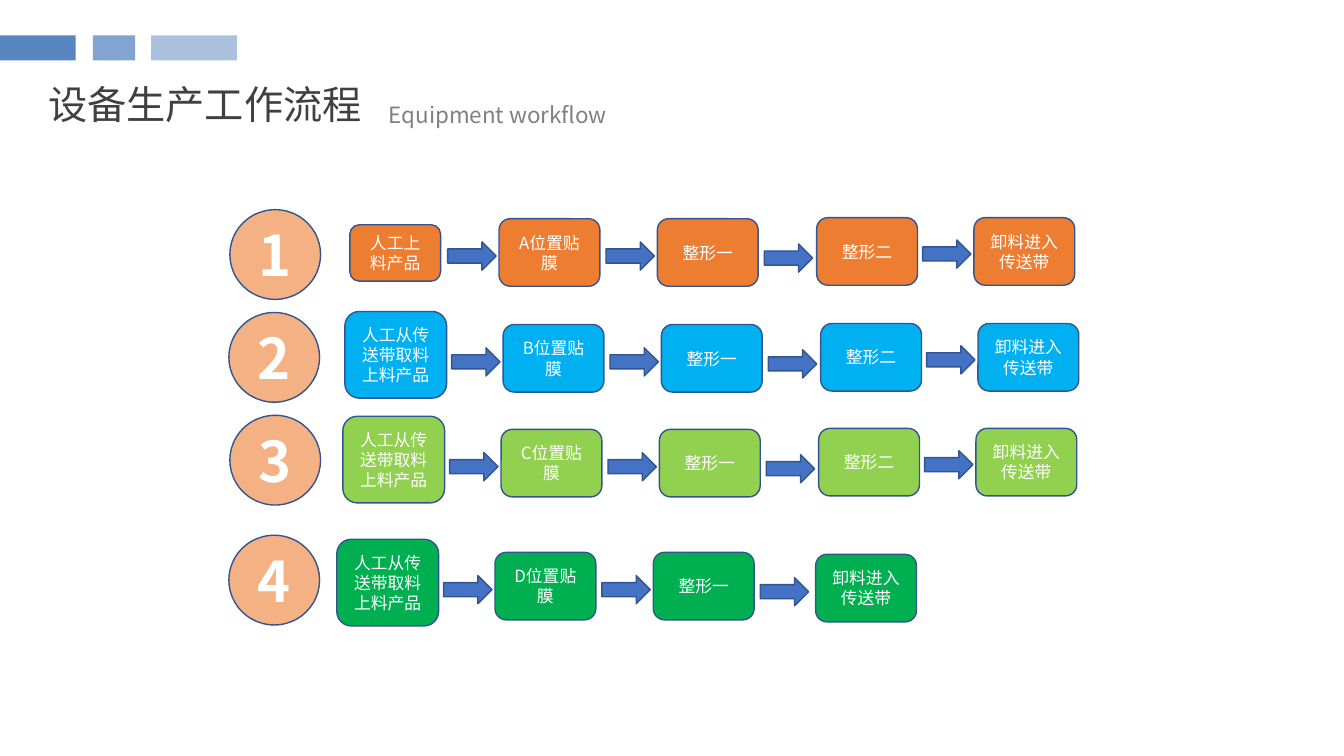
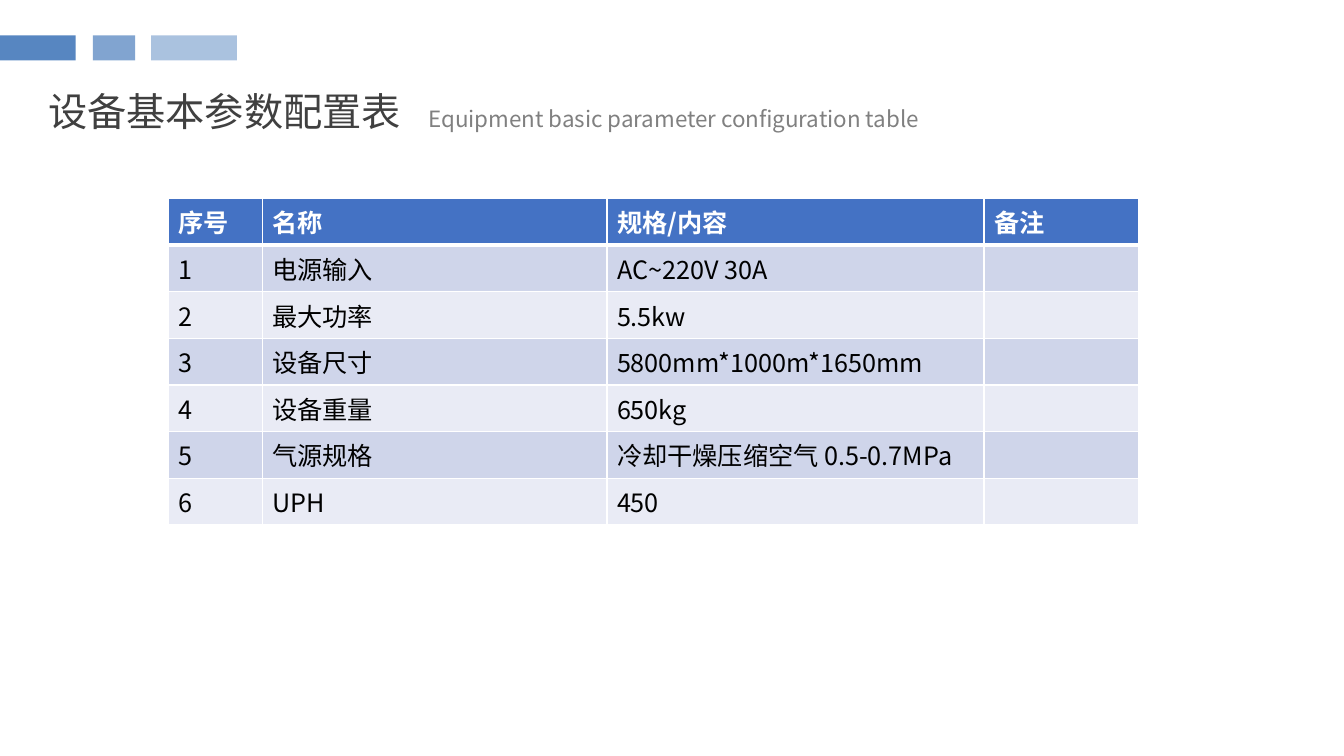
from lxml import etree
from pptx import Presentation
from pptx.dml.color import RGBColor
from pptx.enum import shapes, text
from pptx.oxml import ns
from pptx.util import Inches, Pt

FONT = "Noto Sans CJK SC"
WHITE = RGBColor(0xFF, 0xFF, 0xFF)
BLACK = RGBColor(0, 0, 0)
DARK = RGBColor(0x40, 0x40, 0x40)
GRAY = RGBColor(0x80, 0x80, 0x80)
BAND = RGBColor(0x57, 0x86, 0xC1)
BLUE = RGBColor(0x44, 0x72, 0xC4)
EDGE = RGBColor(0x32, 0x54, 0x91)
PEACH = RGBColor(0xF4, 0xB1, 0x83)
ORANGE = RGBColor(0xED, 0x7D, 0x31)
SKY = RGBColor(0x00, 0xB0, 0xF0)
LIME = RGBColor(0x92, 0xD0, 0x50)
GREEN = RGBColor(0x00, 0xB0, 0x50)
PALE = RGBColor(0xE9, 0xEB, 0xF5)
MIST = RGBColor(0xCF, 0xD5, 0xEA)

HEAD = {"size": Pt(28), "bold": False, "color": DARK}
SUB = {"size": Pt(16), "bold": False, "color": GRAY}
STEP = {"size": Pt(12), "bold": False, "color": WHITE}
NUM = {"size": Pt(40), "bold": True, "color": WHITE}
TOP = {"size": Pt(18), "bold": True, "color": WHITE}
BODY = {"size": Pt(18), "bold": False, "color": BLACK}

BANDS = [(0, 0.75, 100), (0.92, 0.42, 75), (1.5, 0.85, 50)]

LOAD, BELT = "人工上料产品", "人工从传送带取料上料产品"
ONE, TWO, OUT = "整形一", "整形二", "卸料进入传送带"
SMALL, LARGE = (-1.48, 0.06, 0.9, 0.56), (-1.57, -0.13, 1.01, 0.86)
BOXES = [(0, 0), (1.57, 0), (3.15, -0.01), (4.71, -0.01)]
SHORT = [(0, 0), (1.57, 0), (3.18, 0.02)]
ARROWS = [(-0.51, 0.23), (1.06, 0.23), (2.63, 0.25), (4.2, 0.21)]
FLOWS = [
    (ORANGE, 4.95, 2.17, 2.28, 2.08, SMALL, BOXES, [LOAD, "A位置贴膜", ONE, TWO, OUT]),
    (SKY, 4.99, 3.22, 2.27, 3.1, LARGE, BOXES, [BELT, "B位置贴膜", ONE, TWO, OUT]),
    (LIME, 4.97, 4.26, 2.28, 4.12, LARGE, BOXES, [BELT, "C位置贴膜", ONE, TWO, OUT]),
    (GREEN, 4.91, 5.48, 2.27, 5.31, LARGE, SHORT, [BELT, "D位置贴膜", ONE, OUT]),
]

COLS = [0.93, 3.42, 3.74, 1.53]
ROWS = [
    ("序号", "名称", "规格/内容", "备注"),
    ("1", "电源输入", "AC~220V 30A", ""),
    ("2", "最大功率", "5.5kw", ""),
    ("3", "设备尺寸", "5800mm*1000m*1650mm", ""),
    ("4", "设备重量", "650kg", ""),
    ("5", "气源规格", "冷却干燥压缩空气 0.5-0.7MPa", ""),
    ("6", "UPH", "450", ""),
]


def style(font, form):
    for key, val in form.items():
        if key == "color":
            font.color.rgb = val
        else:
            setattr(font, key, val)
    font.name = FONT


def write(frame, words, form, align=text.PP_ALIGN.LEFT):
    para = frame.paragraphs[0]
    para.alignment = align
    if not words:
        style(para.font, form)
        return
    run = para.add_run()
    run.text = words
    style(run.font, form)
    east = etree.SubElement(run.font._element, ns.qn("a:ea"))
    east.set("typeface", FONT)


def draw(slide, kind, spot, fill, line=None, words="", form=STEP):
    shape = slide.shapes.add_shape(kind, *map(Inches, spot))
    shape.shadow.inherit = False
    shape.fill.solid()
    shape.fill.fore_color.rgb = fill
    if line is None:
        shape.line.fill.background()
    else:
        shape.line.color.rgb = line
        shape.line.width = Pt(1)
    if words:
        shape.text_frame.vertical_anchor = text.MSO_ANCHOR.MIDDLE
        write(shape.text_frame, words, form, text.PP_ALIGN.CENTER)
    return shape


def place(shape, spot, words, form, wrap):
    for key, val in zip(("left", "top", "width", "height"), spot):
        setattr(shape, key, Inches(val))
    frame = shape.text_frame
    frame.word_wrap = wrap
    frame.auto_size = text.MSO_AUTO_SIZE.NONE
    frame.vertical_anchor = text.MSO_ANCHOR.TOP
    write(frame, words, form)


def start(deck, head, spot, sub, place_sub):
    slide = deck.slides.add_slide(deck.slide_layouts[5])
    for left, wide, alpha in BANDS:
        band = draw(slide, shapes.MSO_SHAPE.RECTANGLE, (left, 0.35, wide, 0.25), BAND)
        if alpha < 100:
            tone = band._element.spPr.find(".//" + ns.qn("a:srgbClr"))
            etree.SubElement(tone, ns.qn("a:alpha")).set("val", str(alpha * 1000))
    place(slide.shapes.title, spot, head, HEAD, False)
    box = slide.shapes.add_textbox(0, 0, 0, 0)
    place(box, place_sub, sub, SUB, True)
    return slide


def flow(slide, num, row):
    fill, left, top, ball_x, ball_y, first, cols, steps = row
    kind = shapes.MSO_SHAPE
    spots = [first] + [(x, y, 1, 0.67) for x, y in cols]
    for words, (x, y, wide, high) in zip(steps, spots):
        draw(slide, kind.FLOWCHART_ALTERNATE_PROCESS,
             (left + x, top + y, wide, high), fill, EDGE, words)
    for x, y in ARROWS[:len(cols)]:
        draw(slide, kind.RIGHT_ARROW, (left + x, top + y, 0.48, 0.28), BLUE, EDGE)
    draw(slide, kind.OVAL, (ball_x, ball_y, 0.9, 0.89), PEACH, EDGE, str(num), NUM)


def border(cell, thick):
    props = cell._tc.get_or_add_tcPr()
    for side in "LRTB":
        line = etree.SubElement(props, ns.qn("a:ln" + side))
        line.set("w", str(Pt(thick.get(side, 1))))
        fill = etree.SubElement(line, ns.qn("a:solidFill"))
        etree.SubElement(fill, ns.qn("a:srgbClr")).set("val", str(WHITE))


def grid(slide):
    spot = map(Inches, (1.67, 1.97, sum(COLS), 0.4 * len(ROWS)))
    table = slide.shapes.add_table(len(ROWS), len(COLS), *spot).table
    for col, wide in zip(table.columns, COLS):
        col.width = Inches(wide)
    for r, row in enumerate(ROWS):
        table.rows[r].height = Inches(0.4)
        thick = {0: {"B": 3}, 1: {"T": 3}}.get(r, {})
        for c, words in enumerate(row):
            cell = table.cell(r, c)
            border(cell, thick)
            cell.fill.solid()
            cell.fill.fore_color.rgb = BLUE if r == 0 else (PALE, MIST)[r % 2]
            write(cell.text_frame, words, BODY if r else TOP)


def main():
    deck = Presentation()
    deck.slide_width, deck.slide_height = Inches(13.33), Inches(7.5)
    work = start(deck, "设备生产工作流程", (0.38, 0.75, 3.34, 0.57),
                 "Equipment workflow", (3.76, 0.95, 2.56, 0.37))
    for num, row in enumerate(FLOWS, 1):
        flow(work, num, row)
    specs = start(deck, "设备基本参数配置表", (0.38, 0.82, 3.74, 0.57),
                  "Equipment basic parameter configuration table", (4.15, 0.99, 5.85, 0.37))
    grid(specs)
    deck.save("out.pptx")


if __name__ == "__main__":
    main()
